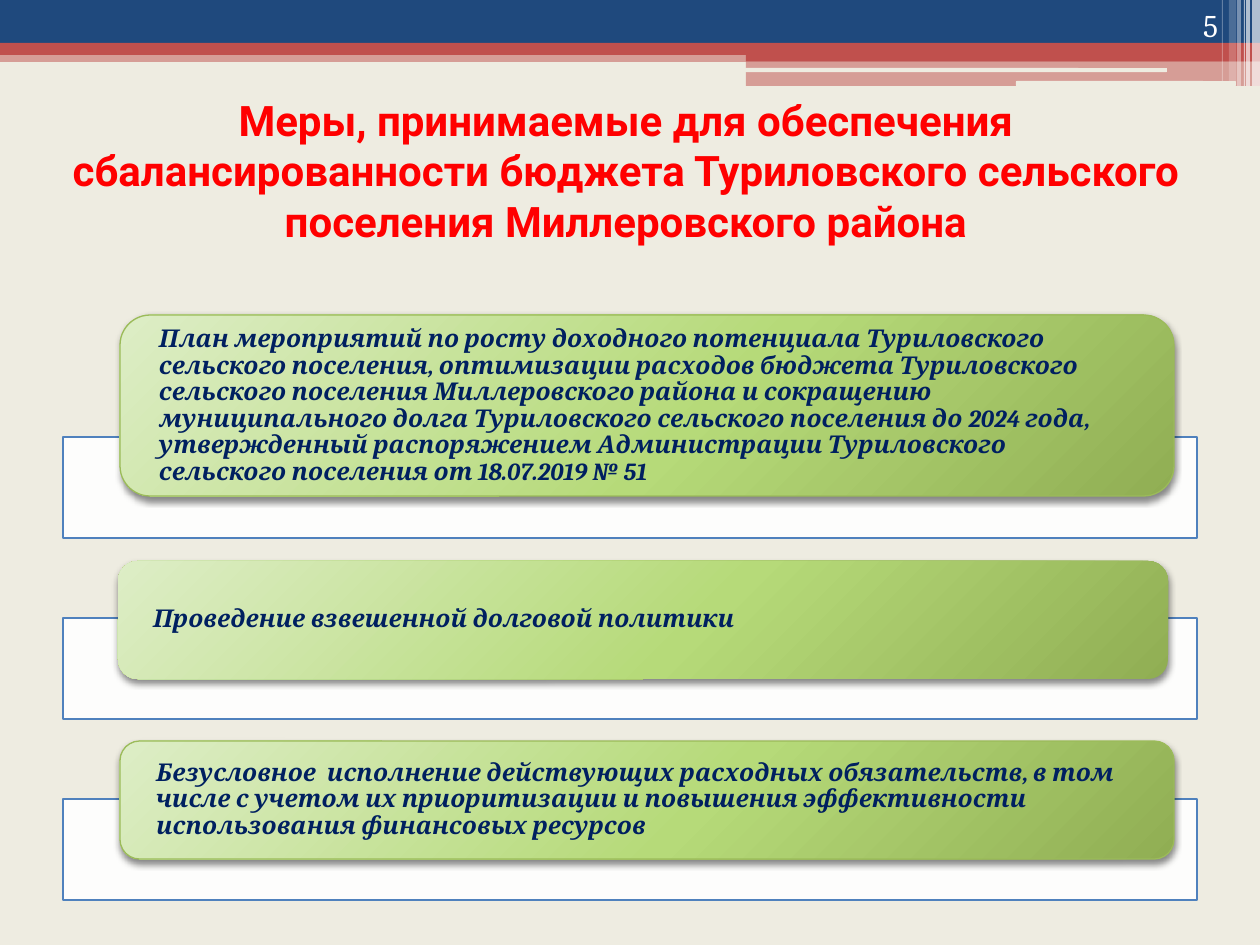
from lxml import etree
from pptx import Presentation
from pptx.dml.color import RGBColor
from pptx.enum.shapes import MSO_SHAPE as Kind
from pptx.enum.text import MSO_ANCHOR as Anchor, PP_ALIGN as Align
from pptx.oxml import parse_xml
from pptx.oxml.ns import qn
from pptx.util import Pt

PX = 914400 / 126
NS = 'xmlns:a="http://schemas.openxmlformats.org/drawingml/2006/main"'
COLORS = {
    "paper": "EEECE1", "navy": "1F497D", "brick": "C0504D", "white": "FFFFFF",
    "red": "FF0000", "ink": "002060", "blue": "4F81BD", "green": "9BBB59",
    "pale": "DDEDC6", "lime": "B6DA79", "olive": "90AE53", "black": "000000",
}
TITLE = ("Меры, принимаемые для обеспечения сбалансированности бюджета "
         "Туриловского сельского поселения Миллеровского района")
NUMBER = "5"
BANDS = [
    ((0, 50, 1260, 12), "brick", 50),
    ((0, 0, 1260, 43), "navy", 100),
    ((0, 43, 1260, 12), "brick", 100),
    ((746, 49, 514, 12), "brick", 100),
    ((746, 61, 514, 25), "brick", 50),
]
SLOTS = [(745, 68, 422, 4), (1016, 81, 220, 5)]
RAYS = [(1252, 8, 86, 65), (1246, 4, 86, 65), (1244, 1, 86, 60),
        (1237, 4, 86, 40), (1229, 7, 81, 20), (1222, 1, 81, 30)]
MEASURES = [
    ("План мероприятий по росту доходного потенциала Туриловского сельского "
     "поселения, оптимизации расходов бюджета Туриловского сельского поселения "
     "Миллеровского района и сокращению муниципального долга Туриловского "
     "сельского поселения до 2024 года, утвержденный распоряжением "
     "Администрации Туриловского сельского поселения от 18.07.2019 № 51",
     (120, 315, 1054, 181), (129, 324, 1036, 164), "green"),
    ("Проведение взвешенной долговой политики",
     (118, 561, 1050, 118), (123, 567, 1038, 106), None),
    ("Безусловное  исполнение действующих расходных обязательств, в том числе "
     "с учетом их приоритизации и повышения эффективности использования "
     "финансовых ресурсов",
     (120, 741, 1054, 118), (126, 747, 1042, 106), "green"),
]
ROW_TOP, ROW_STEP = 437, 181


def emu(box):
    return [round(v * PX) for v in box]


def rgb(name):
    return RGBColor.from_string(COLORS[name])


def draw(slide, kind, box, fill=None, alpha=100, line=None, width=1):
    shape = slide.shapes.add_shape(kind, *emu(box))
    shape.shadow.inherit = False
    if fill:
        shape.fill.solid()
        shape.fill.fore_color.rgb = rgb(fill)
        if alpha < 100:
            tint = next(shape._element.spPr.iter(qn("a:srgbClr")))
            etree.SubElement(tint, qn("a:alpha")).set("val", str(alpha * 1000))
    if line:
        shape.line.color.rgb = rgb(line)
        shape.line.width = Pt(width)
    else:
        shape.line.fill.background()
    return shape


def write(shape, text, font, size, color, align, anchor, pads):
    frame = shape.text_frame
    frame.word_wrap = True
    frame.vertical_anchor = anchor
    (frame.margin_left, frame.margin_top,
     frame.margin_right, frame.margin_bottom) = emu(pads)
    para = frame.paragraphs[0]
    para.text = text
    para.alignment = align
    para.font.name = font
    para.font.size = Pt(size)
    para.font.color.rgb = rgb(color)
    return para


def shade(card):
    stops = "".join(
        f'<a:gs pos="{pos * 1000}"><a:srgbClr val="{COLORS[name]}"/></a:gs>'
        for pos, name in [(0, "pale"), (55, "lime"), (100, "olive")])
    grad = parse_xml(
        f'<a:gradFill {NS} rotWithShape="1"><a:gsLst>{stops}</a:gsLst>'
        '<a:path path="circle"><a:fillToRect l="-40000" t="-90000" '
        'r="140000" b="190000"/></a:path></a:gradFill>')
    props = card._element.spPr
    props.find(qn("a:prstGeom")).addnext(grad)
    props.find(qn("a:effectLst")).append(parse_xml(
        f'<a:outerShdw {NS} blurRad="{Pt(4)}" dist="{Pt(2)}" dir="5400000" '
        f'rotWithShape="0"><a:srgbClr val="{COLORS["black"]}">'
        '<a:alpha val="45000"/></a:srgbClr></a:outerShdw>'))


def main():
    deck = Presentation()
    deck.slide_width, deck.slide_height = emu((1260, 945))
    slide = deck.slides.add_slide(deck.slide_layouts[5])
    slide.background.fill.solid()
    slide.background.fill.fore_color.rgb = rgb("paper")

    for box, fill, alpha in BANDS:
        draw(slide, Kind.RECTANGLE, box, fill, alpha)
    for box in SLOTS:
        draw(slide, Kind.ROUNDED_RECTANGLE, box, "paper")
    for left, width, tall, alpha in RAYS:
        draw(slide, Kind.RECTANGLE, (left, 0, width, tall), "white", alpha)

    title = slide.shapes.title
    title.left, title.top, title.width, title.height = emu((59, 129, 1134, 128))
    para = write(title, TITLE, "Roboto", 24, "red", Align.CENTER,
                 Anchor.MIDDLE, (13, 6, 13, 52))
    para.font.bold = True

    for row, (text, box, area, line) in enumerate(MEASURES):
        draw(slide, Kind.RECTANGLE, (63, ROW_TOP + row * ROW_STEP, 1134, 101),
             "white", 90, "blue", 1.5)
        shade(draw(slide, Kind.ROUNDED_RECTANGLE, box, line=line, width=0.75))
        label = slide.shapes.add_textbox(*emu(area))
        para = write(label, text, "Cambria", 14, "ink", Align.LEFT,
                     Anchor.MIDDLE, (30, 0, 30, 0))
        para.font.bold = para.font.italic = True
        para.line_spacing = 0.9

    page = slide.shapes.add_textbox(*emu((1126, 0, 105, 50)))
    write(page, NUMBER, "Cambria", 18, "white", Align.RIGHT,
          Anchor.BOTTOM, (13, 6, 13, 6))
    deck.save("out.pptx")


if __name__ == "__main__":
    main()
